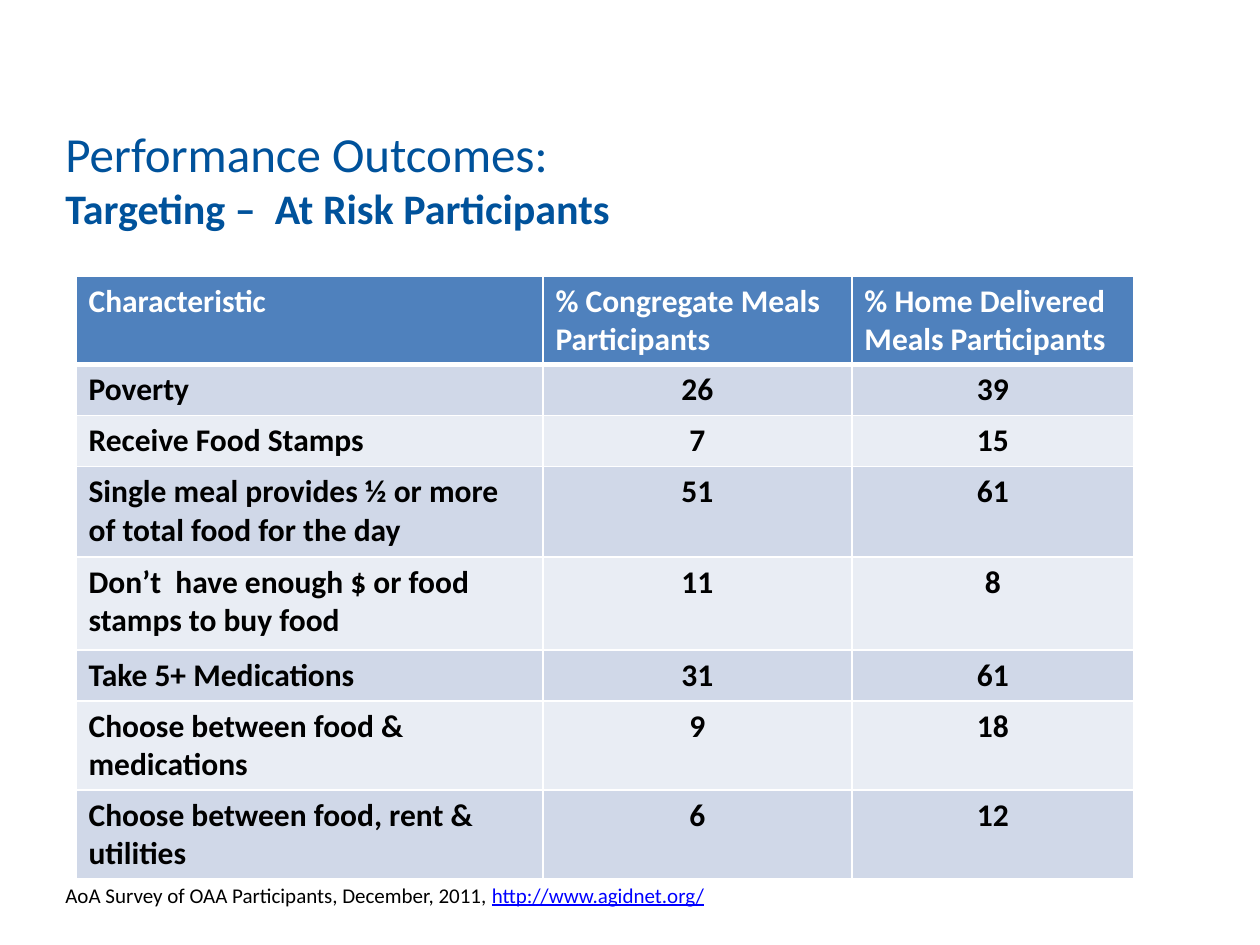
from dataclasses import dataclass

from pptx import Presentation
from pptx.dml.color import RGBColor
from pptx.enum.text import MSO_ANCHOR, PP_ALIGN
from pptx.oxml import parse_xml
from pptx.oxml.ns import nsdecls
from pptx.util import Emu, Pt

PIXEL = 914400 // 126
FONT_NAME = "Calibri"
COLORS = {
    "title": "00529B",
    "header": "4F81BD",
    "odd_row": "D0D8E8",
    "even_row": "E9EDF4",
    "white": "FFFFFF",
    "black": "000000",
    "link": "0000FF",
}


@dataclass
class Box:
    left: int
    top: int
    width: int
    height: int

    def lengths(self) -> list[Emu]:
        return [px(n) for n in (self.left, self.top, self.width, self.height)]


@dataclass
class TextRun:
    text: str
    color: str
    format: dict


@dataclass
class Row:
    height: int
    texts: tuple[str, str, str]


TITLE_BOX = Box(53, 100, 1038, 157)
TABLE_BOX = Box(76, 276, 1058, 600)
SOURCE_BOX = Box(53, 876, 677, 38)
COLUMN_WIDTHS = (467, 309, 282)

TITLE_LINES = [
    TextRun("Performance Outcomes:", "title", {"size": Pt(28)}),
    TextRun("Targeting –  At Risk Participants", "title", {"size": Pt(24), "bold": True}),
]
SOURCE_RUNS = [
    TextRun("AoA Survey of OAA Participants, December, 2011, ", "black", {"size": Pt(12)}),
    TextRun("http://www.agidnet.org/", "link", {"size": Pt(12), "underline": True}),
]
ROWS = [
    Row(88, ("Characteristic", "% Congregate Meals Participants",
             "% Home Delivered Meals Participants")),
    Row(51, ("Poverty", "26", "39")),
    Row(51, ("Receive Food Stamps", "7", "15")),
    Row(91, ("Single meal provides ½ or more of total food for the day", "51", "61")),
    Row(93, ("Don’t  have enough $ or food stamps to buy food", "11", "8")),
    Row(51, ("Take 5+ Medications", "31", "61")),
    Row(89, ("Choose between food & medications", "9", "18")),
    Row(88, ("Choose between food, rent & utilities", "6", "12")),
]


def px(length: int) -> Emu:
    return Emu(length * PIXEL)


def add_run(paragraph, text_run: TextRun) -> None:
    run = paragraph.add_run()
    run.text = text_run.text
    for name, value in {"name": FONT_NAME, **text_run.format}.items():
        setattr(run.font, name, value)
    run.font.color.rgb = RGBColor.from_string(COLORS[text_run.color])


def add_text(slide, box: Box, runs: list[TextRun], line_breaks: bool, frame_format: dict) -> None:
    frame = slide.shapes.add_textbox(*box.lengths()).text_frame
    for name, value in frame_format.items():
        setattr(frame, name, value)
    paragraph = frame.paragraphs[0]
    for index, text_run in enumerate(runs):
        if index and line_breaks:
            paragraph.add_line_break()
        add_run(paragraph, text_run)


def set_borders(cell, top: int, bottom: int) -> None:
    properties = cell._tc.get_or_add_tcPr()
    widths = {"lnL": 1, "lnR": 1, "lnT": top, "lnB": bottom}
    for position, (side, width) in enumerate(widths.items()):
        properties.insert(position, parse_xml(
            f'<a:{side} {nsdecls("a")} w="{Pt(width)}"><a:solidFill>'
            f'<a:srgbClr val="{COLORS["white"]}"/></a:solidFill></a:{side}>'))


def add_table(slide, box: Box, rows: list[Row]) -> None:
    table = slide.shapes.add_table(len(rows), len(COLUMN_WIDTHS), *box.lengths()).table
    for column, width in zip(table.columns, COLUMN_WIDTHS):
        column.width = px(width)
    for row_index, row in enumerate(rows):
        table.rows[row_index].height = px(row.height)
        is_header = row_index == 0
        band = "header" if is_header else "odd_row" if row_index % 2 else "even_row"
        for column_index, text in enumerate(row.texts):
            cell = table.cell(row_index, column_index)
            cell.fill.solid()
            cell.fill.fore_color.rgb = RGBColor.from_string(COLORS[band])
            # A thicker rule parts the header from the body
            set_borders(cell, 3 if row_index == 1 else 1, 3 if is_header else 1)
            paragraph = cell.text_frame.paragraphs[0]
            if column_index and not is_header:
                paragraph.alignment = PP_ALIGN.CENTER
            color = "white" if is_header else "black"
            add_run(paragraph, TextRun(text, color, {"size": Pt(18), "bold": True}))


def main() -> None:
    presentation = Presentation()
    presentation.slide_width = px(1260)
    presentation.slide_height = px(945)
    slide = presentation.slides.add_slide(presentation.slide_layouts[6])

    # Title
    add_text(slide, TITLE_BOX, TITLE_LINES, True,
             {"word_wrap": True, "vertical_anchor": MSO_ANCHOR.MIDDLE})
    # Outcomes table
    add_table(slide, TABLE_BOX, ROWS)
    # Source line
    add_text(slide, SOURCE_BOX, SOURCE_RUNS, False, {"word_wrap": False})

    presentation.save("out.pptx")


if __name__ == "__main__":
    main()
